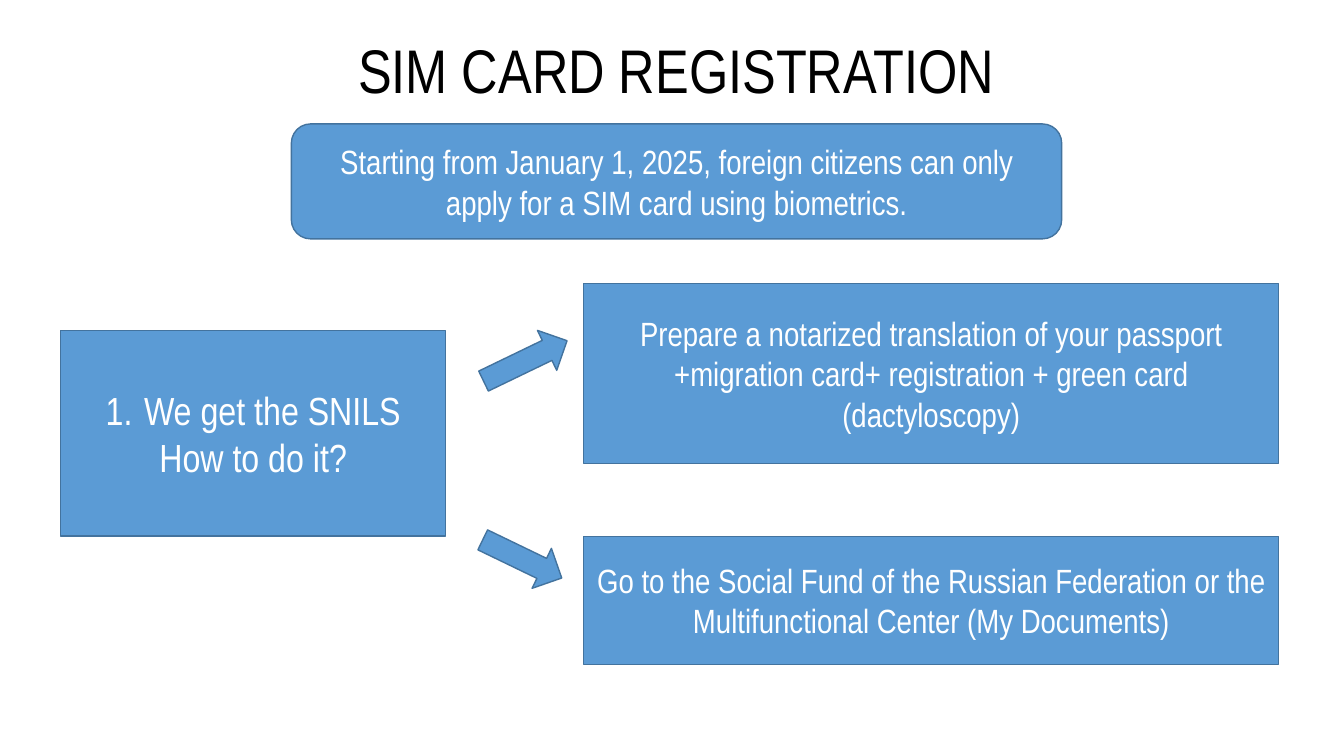
from dataclasses import dataclass

from lxml.etree import SubElement
from pptx import Presentation
from pptx.dml.color import RGBColor
from pptx.enum.shapes import MSO_SHAPE
from pptx.enum.text import MSO_ANCHOR, PP_ALIGN
from pptx.oxml.ns import qn
from pptx.util import Inches, Pt


@dataclass(frozen=True)
class Theme:
    font: str = "Arial Narrow"
    fill: RGBColor = RGBColor(0x5B, 0x9B, 0xD5)
    edge: RGBColor = RGBColor(0x43, 0x73, 0x9E)
    dark: RGBColor = RGBColor(0, 0, 0)
    light: RGBColor = RGBColor(255, 255, 255)
    title: int = 44
    step: int = 28
    body: int = 24


THEME = Theme()


def add_run(para, text, size, color):
    para.alignment = PP_ALIGN.CENTER
    run = para.add_run()
    run.text = text
    run.font.name = THEME.font
    run.font.size = Pt(size)
    run.font.color.rgb = color


def add_title(slide, text):
    title = slide.shapes.title
    title.left, title.top = Inches(0.96), Inches(0)
    title.width, title.height = Inches(11.5), Inches(1.45)
    frame = title.text_frame
    frame.word_wrap = True
    frame.vertical_anchor = MSO_ANCHOR.MIDDLE
    para = frame.paragraphs[0]
    para.line_spacing = 0.9
    add_run(para, text, THEME.title, THEME.dark)


def add_form(slide, kind, left, top, width, height):
    """Add a preset shape in the slide's blue style."""
    form = slide.shapes.add_shape(
        kind, Inches(left), Inches(top), Inches(width), Inches(height))
    form.shadow.inherit = False
    form.fill.solid()
    form.fill.fore_color.rgb = THEME.fill
    form.line.color.rgb = THEME.edge
    form.line.width = Pt(1)
    return form


def add_box(slide, kind, place, lines, size):
    frame = add_form(slide, kind, *place).text_frame
    frame.word_wrap = True
    frame.vertical_anchor = MSO_ANCHOR.MIDDLE
    for i, text in enumerate(lines):
        para = frame.add_paragraph() if i else frame.paragraphs[0]
        add_run(para, text, size, THEME.light)
    return frame


def number(para):
    """Give a paragraph an automatic number with a hanging indent."""
    props = para._p.get_or_add_pPr()
    props.set("marL", str(Inches(0.38)))
    props.set("indent", str(Inches(-0.38)))
    SubElement(props, qn("a:buFont"), typeface="+mj-lt")
    SubElement(props, qn("a:buAutoNum"), type="arabicPeriod")


def add_arrow(slide, left, top, height, angle):
    arrow = add_form(slide, MSO_SHAPE.DOWN_ARROW, left, top, 0.44, height)
    arrow.rotation = angle


def main():
    deck = Presentation()
    deck.slide_width, deck.slide_height = Inches(13.33), Inches(7.5)
    slide = deck.slides.add_slide(deck.slide_layouts[5])

    add_title(slide, "SIM CARD REGISTRATION")
    add_box(slide, MSO_SHAPE.ROUNDED_RECTANGLE, (2.89, 1.23, 7.64, 1.14),
            ["Starting from January 1, 2025, foreign citizens can only "
             "apply for a SIM card using biometrics."], THEME.body)
    step = add_box(slide, MSO_SHAPE.RECTANGLE, (0.6, 3.28, 3.82, 2.04),
                   ["We get the SNILS", "How to do it?"], THEME.step)
    number(step.paragraphs[0])

    tasks = [
        (2.81, 1.79, "Prepare a notarized translation of your passport "
         "+migration card+ registration + green card (dactyloscopy)"),
        (5.32, 1.27, "Go to the Social Fund of the Russian Federation or the "
         "Multifunctional Center (My Documents)"),
    ]
    for top, height, text in tasks:
        add_box(slide, MSO_SHAPE.RECTANGLE, (5.79, top, 6.89, height),
                [text], THEME.body)

    add_arrow(slide, 4.99, 3.12, 0.92, 244.2)
    add_arrow(slide, 4.96, 5.11, 0.87, 295.8)
    deck.save("out.pptx")


if __name__ == "__main__":
    main()
